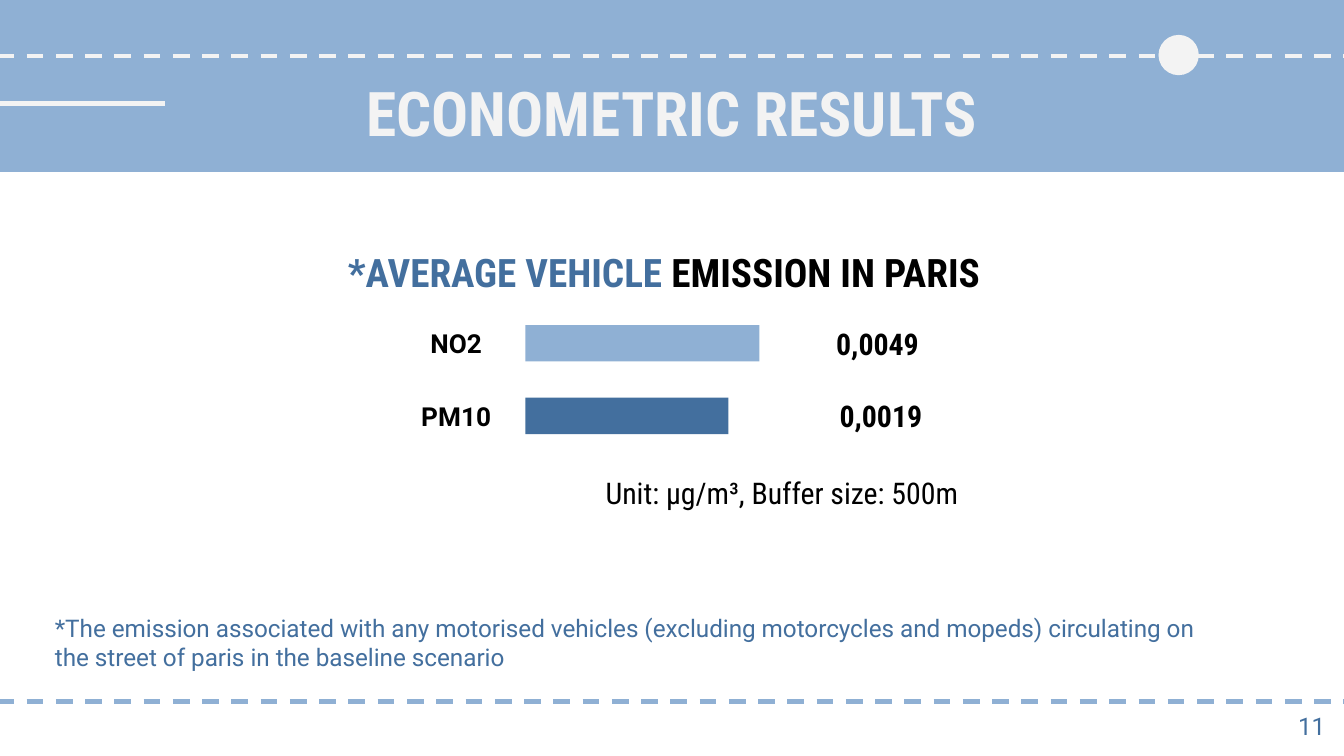
from lxml import etree
from pptx import Presentation
from pptx.dml.color import RGBColor
from pptx.enum.dml import MSO_LINE
from pptx.enum.shapes import MSO_CONNECTOR, MSO_SHAPE
from pptx.enum.text import MSO_ANCHOR, PP_ALIGN
from pptx.oxml.ns import qn
from pptx.util import Inches, Pt

LEFT, CENTER, RIGHT = PP_ALIGN.LEFT, PP_ALIGN.CENTER, PP_ALIGN.RIGHT
TOP, MIDDLE = MSO_ANCHOR.TOP, MSO_ANCHOR.MIDDLE
BAR, RECT, OVAL = MSO_SHAPE.ROUNDED_RECTANGLE, MSO_SHAPE.RECTANGLE, MSO_SHAPE.OVAL
STRAIGHT, DASH = MSO_CONNECTOR.STRAIGHT, MSO_LINE.DASH

# Content
TITLE = "ECONOMETRIC RESULTS"
HEADING = [("*AVERAGE VEHICLE", "blue"), (" EMISSION IN PARIS", "black")]
EMISSIONS = [  # pollutant, value, bar length, bar colour
    ("NO2", "0,0049 ", 1.74, "sky"),
    ("PM10", "0,0019", 1.51, "blue"),
]
UNIT = "Unit: µg/m³, Buffer size: 500m "
FOOTNOTE = ("*The emission associated with any motorised vehicles (excluding "
            "motorcycles and mopeds) circulating on the street of paris in the "
            "baseline scenario")
PAGE = "11"

# Style and grid
COLORS = {"sky": "8FB0D4", "blue": "436F9E", "pale": "F3F3F3", "black": "000000"}
BODY, CONDENSED = "Roboto", "Roboto Condensed"
W = 10
H = W * 9 / 16
BLEED = 0.02
LABEL_X, BAR_X, VALUE_X = 2.93, 3.91, 6.04
ROW_Y, ROW_STEP, ROW_H, BAR_H = 2.36, 0.54, 0.39, 0.27

prs = Presentation()
prs.slide_width, prs.slide_height = Inches(W), Inches(H)
s = prs.slides.add_slide(prs.slide_layouts[6])


def rgb(name):
    return RGBColor.from_string(COLORS[name])


def add_shape(kind, x, y, w, h, color):
    sp = s.shapes.add_shape(kind, Inches(x), Inches(y), Inches(w), Inches(h))
    sp.shadow.inherit = False
    sp.fill.solid()
    sp.fill.fore_color.rgb = rgb(color)
    sp.line.fill.background()
    if kind == BAR:
        sp.adjustments[0] = 0


def add_line(x1, x2, y, color, dash=None):
    ln = s.shapes.add_connector(STRAIGHT, Inches(x1), Inches(y), Inches(x2), Inches(y))
    ln.line.color.rgb = rgb(color)
    ln.line.width = Pt(2.25)
    if dash:
        ln.line.dash_style = dash
    etree.SubElement(ln._element.spPr, qn("a:effectLst"))


def add_text(x, y, w, h, runs, size, font, align=LEFT, anchor=TOP, bold=False):
    tf = s.shapes.add_textbox(Inches(x), Inches(y), Inches(w), Inches(h)).text_frame
    tf.word_wrap = True
    tf.vertical_anchor = anchor
    tf.margin_left = tf.margin_right = tf.margin_top = tf.margin_bottom = Inches(0.1)
    p = tf.paragraphs[0]
    p.alignment = align
    for text, color in runs:
        r = p.add_run()
        r.text = text
        r.font.size, r.font.name, r.font.bold = Pt(size), font, bold
        r.font.color.rgb = rgb(color)


# Header band, rules and dot
add_shape(RECT, -BLEED, 0, W + 2 * BLEED, 1.28, "sky")
add_line(-BLEED, W + BLEED, 0.42, "pale", DASH)
add_line(-0.03, 1.23, 0.77, "pale")
add_shape(OVAL, 8.62, 0.26, 0.3, 0.3, "pale")
add_text(0.78, 0.46, 8.44, 0.63, [(TITLE, "pale")], 33, CONDENSED, CENTER, bold=True)

# Emission bars
add_text(2.49, 1.84, 5.02, 0.37, HEADING, 21, CONDENSED, anchor=MIDDLE, bold=True)
for i, (name, value, length, color) in enumerate(EMISSIONS):
    y = ROW_Y + i * ROW_STEP
    add_shape(BAR, BAR_X, y + (ROW_H - BAR_H) / 2, length, BAR_H, color)
    add_text(LABEL_X, y, 0.93, ROW_H, [(name, "black")], 14, BODY, CENTER, MIDDLE, True)
    add_text(VALUE_X, y, 1.03, ROW_H, [(value, "black")], 16, CONDENSED, CENTER, MIDDLE, True)
add_text(4.01, 3.43, 3.27, 0.47, [(UNIT, "black")], 16, CONDENSED, RIGHT)

# Footnote, footer rule and page number
add_text(0.31, 4.46, 8.91, 0.64, [(FOOTNOTE, "blue")], 13, BODY)
add_line(-BLEED, W + BLEED, 5.22, "sky", DASH)
add_text(9.36, 5.19, 0.6, 0.43, [(PAGE, "blue")], 13, BODY, RIGHT)

prs.save("out.pptx")
